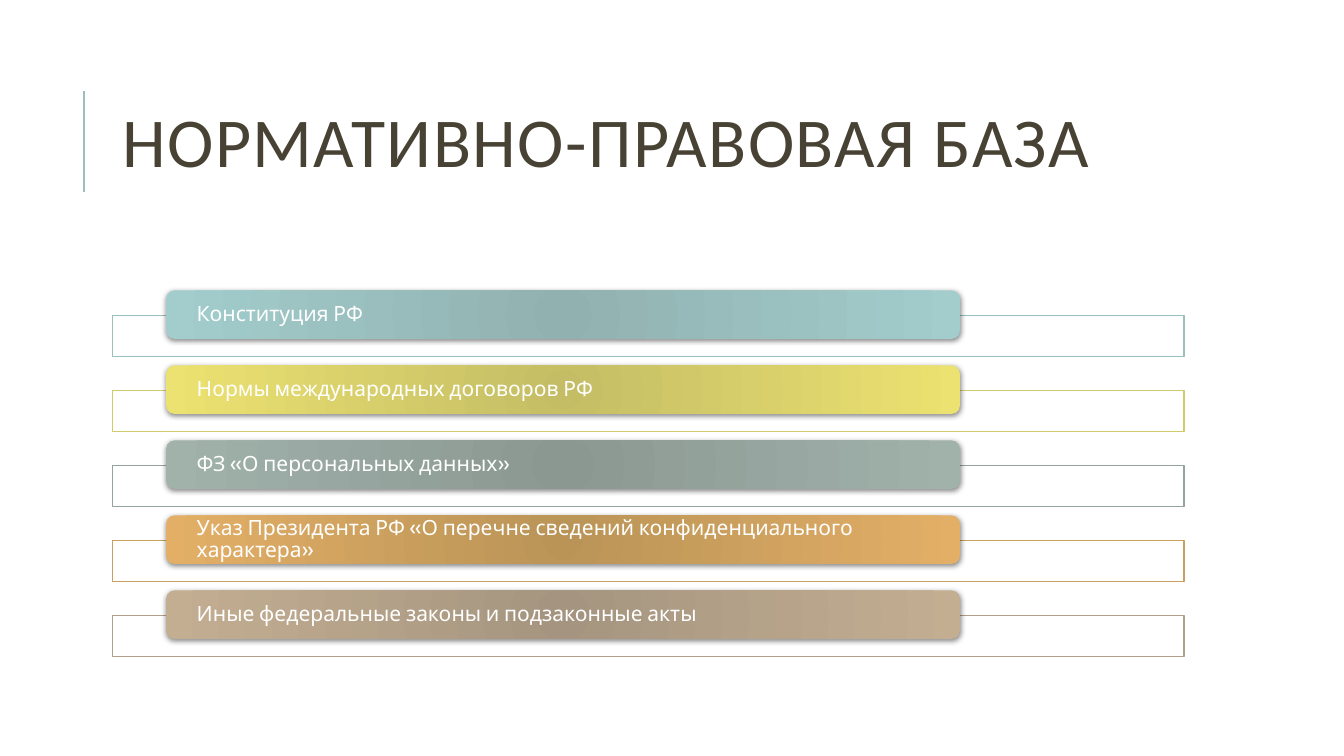
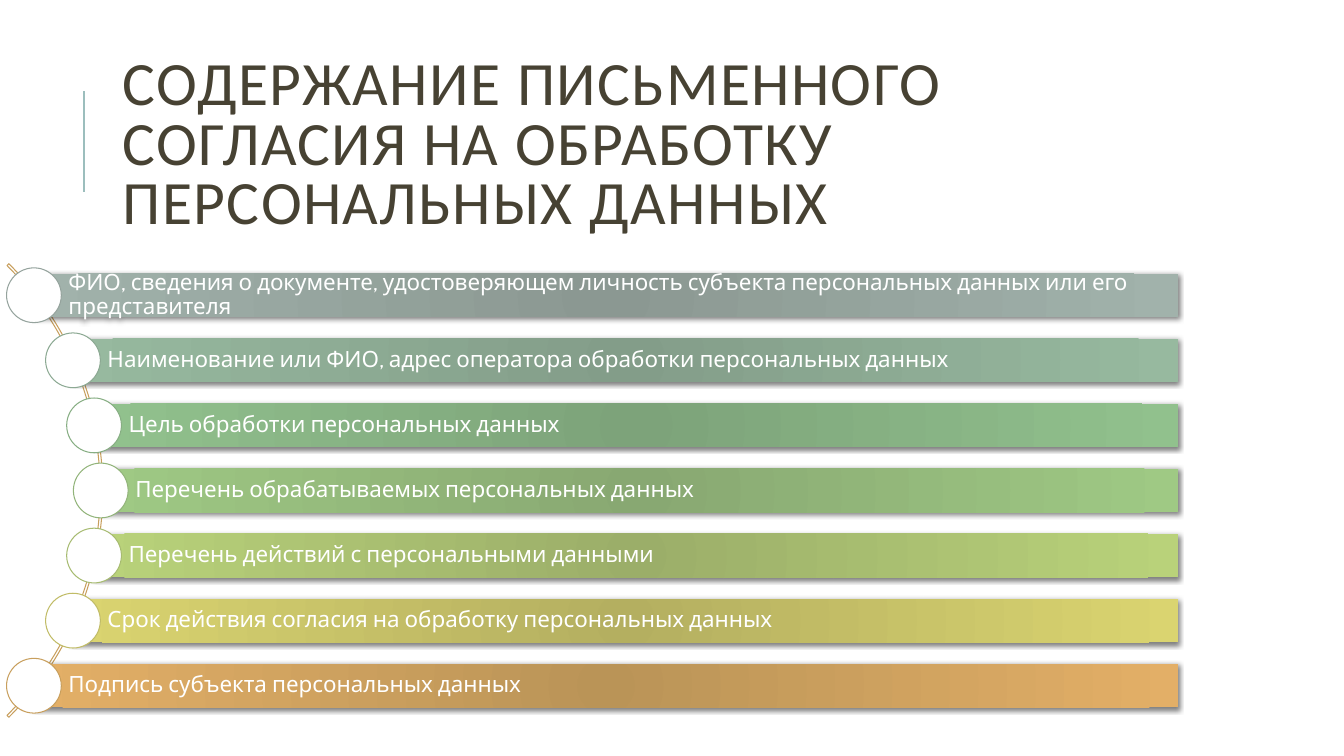
from math import sqrt

from lxml.etree import SubElement
from pptx import Presentation
from pptx.dml.color import RGBColor
from pptx.enum.shapes import MSO_CONNECTOR, MSO_SHAPE
from pptx.enum.text import MSO_ANCHOR, PP_ALIGN
from pptx.oxml.ns import qn
from pptx.util import Cm, Pt

COLOURS = {"title": "474233", "rule": "9CBEBD", "white": "FFFFFF", "shadow": "000000"}

# Each tone: thin outline, gradient centre, gradient rim
TONES = {
    "teal": {"edge": "9CBEBD", "core": "91B1B0", "rim": "A2CDCC"},
    "yellow": {"edge": "D2CB6C", "core": "C4BD65", "rim": "ECE271"},
    "grey": {"edge": "95A39D", "core": "8B9892", "rim": "A1B2AB"},
    "orange": {"edge": "C89F5D", "core": "BA9457", "rim": "E3AF67"},
    "beige": {"edge": "B1A089", "core": "A59580", "rim": "C3AE92"},
    "sage": {"edge": "8CA993", "core": "839D89", "rim": "97B99F"},
    "green": {"edge": "87AE83", "core": "7DA37A", "rim": "91C18D"},
    "leaf": {"edge": "92B47A", "core": "88A872", "rim": "9FC984"},
    "lime": {"edge": "A7BB71", "core": "9BAE69", "rim": "B9D27A"},
    "olive": {"edge": "C1BC67", "core": "B4AF60", "rim": "DAD470"},
}
TITLE_FONT, BODY_FONT = "Calibri", "Cabin"

LAWS = [
    ("teal", "Конституция РФ"),
    ("yellow", "Нормы международных договоров РФ"),
    ("grey", "ФЗ «О персональных данных»"),
    ("orange", "Указ Президента РФ «О перечне сведений конфиденциального характера»"),
    ("beige", "Иные федеральные законы и подзаконные акты"),
]
CONSENT_PARTS = [
    ("grey", "ФИО, сведения о документе, удостоверяющем личность субъекта "
             "персональных данных или его представителя"),
    ("sage", "Наименование или ФИО, адрес оператора обработки персональных данных"),
    ("green", "Цель обработки персональных данных"),
    ("leaf", "Перечень обрабатываемых персональных данных"),
    ("lime", "Перечень действий с персональными данными"),
    ("olive", "Срок действия согласия на обработку персональных данных"),
    ("orange", "Подпись субъекта персональных данных"),
]


def rgb(value):
    return RGBColor.from_string(value)


def write_text(shape, text, font, size, colour, spacing):
    """Put one left-aligned, vertically centred paragraph into a shape."""
    frame = shape.text_frame
    frame.word_wrap = True
    frame.vertical_anchor = MSO_ANCHOR.MIDDLE
    para = frame.paragraphs[0]
    para.text = text
    para.alignment = PP_ALIGN.LEFT
    para.line_spacing = spacing
    para.font.name = font
    para.font.size = Pt(size)
    para.font.color.rgb = rgb(colour)
    return para


def add_titled_page(deck, title, size):
    page = deck.slides.add_slide(deck.slide_layouts[6])
    # Vertical rule beside the title
    rule = page.shapes.add_connector(
        MSO_CONNECTOR.STRAIGHT, Cm(2.12), Cm(4.83), Cm(2.12), Cm(2.29))
    rule.line.color.rgb = rgb(COLOURS["rule"])
    rule.line.width = Pt(1.5)
    SubElement(rule._element.spPr, qn("a:effectLst"))
    # Title with letter spacing
    box = page.shapes.add_textbox(Cm(2.84), Cm(1.63), Cm(27), Cm(4.17))
    para = write_text(box, title, TITLE_FONT, size, COLOURS["title"], 0.8)
    for span in para.runs:
        span.font._element.set("spc", "100")
    return page


def add_outline(page, kind, left, top, width, height, edge, filled=True):
    shape = page.shapes.add_shape(kind, Cm(left), Cm(top), Cm(width), Cm(height))
    shape.shadow.inherit = False
    if filled:
        shape.fill.solid()
        shape.fill.fore_color.rgb = rgb(COLOURS["white"])
    else:
        shape.fill.background()
    shape.line.color.rgb = rgb(edge)
    shape.line.width = Pt(0.75)
    return shape


def fill_radial(shape, tone):
    shape.fill.gradient()
    for stop, part in zip(shape.fill.gradient_stops, ("core", "rim")):
        stop.color.rgb = rgb(tone[part])
    gradient = shape._element.spPr.find(qn("a:gradFill"))
    gradient.remove(gradient.find(qn("a:lin")))
    circle = SubElement(gradient, qn("a:path"), path="circle")
    SubElement(circle, qn("a:fillToRect"), dict.fromkeys("ltrb", "100000"))


def cast_shadow(shape):
    shape.shadow.inherit = False
    effects = shape._element.spPr.find(qn("a:effectLst"))
    shadow = SubElement(effects, qn("a:outerShdw"), blurRad=str(Pt(4)),
                        dist=str(Pt(1)), dir="5400000", rotWithShape="0")
    colour = SubElement(shadow, qn("a:srgbClr"), val=COLOURS["shadow"])
    SubElement(colour, qn("a:alpha"), val="50000")


def add_bar(page, kind, left, top, width, height, tone, text, size, insets):
    bar = page.shapes.add_shape(kind, Cm(left), Cm(top), Cm(width), Cm(height))
    bar.line.fill.background()
    fill_radial(bar, tone)
    cast_shadow(bar)
    frame = bar.text_frame
    inset_left, inset_right, inset_vertical = insets
    frame.margin_left, frame.margin_right = Cm(inset_left), Cm(inset_right)
    frame.margin_top = frame.margin_bottom = Cm(inset_vertical)
    write_text(bar, text, BODY_FONT, size, COLOURS["white"], 0.9)


def add_law_list(page):
    """Rounded bars, each overlapping the top of a wide outlined frame."""
    first_top, pitch = 7.95, 1.89
    for index, (name, text) in enumerate(LAWS):
        tone = TONES[name]
        top = first_top + index * pitch
        add_outline(page, MSO_SHAPE.RECTANGLE, 2.84, top, 27, 1.04, tone["edge"])
        add_bar(page, MSO_SHAPE.ROUNDED_RECTANGLE, 4.19, top - 0.63, 20, 1.22,
                tone, text, 15, (0.71, 0.71, 0))


def add_consent_arc(page):
    """Bars that start from dots placed along a circular arc."""
    centre_x, centre_y, radius = -5.49, 12.36, 8.03
    arc_size, pitch, bar_right = 16.16, 1.64, 29.69
    bar_height, dot_size = 1.09, 1.38
    # Thin arc behind the dots
    arc = add_outline(page, MSO_SHAPE.BLOCK_ARC, centre_x - arc_size / 2,
                      centre_y - arc_size / 2, arc_size, arc_size,
                      TONES["orange"]["edge"], filled=False)
    for index, value in enumerate((189, 27, 0.004)):
        arc.adjustments[index] = value
    # Bars and dots
    middle = (len(CONSENT_PARTS) - 1) / 2
    for index, (name, text) in enumerate(CONSENT_PARTS):
        tone = TONES[name]
        offset = (index - middle) * pitch
        x = centre_x + sqrt(radius ** 2 - offset ** 2)
        y = centre_y + offset
        add_bar(page, MSO_SHAPE.RECTANGLE, x, y - bar_height / 2, bar_right - x,
                bar_height, tone, text, 16, (0.87, 0.1, 0.1))
        add_outline(page, MSO_SHAPE.OVAL, x - dot_size / 2, y - dot_size / 2,
                    dot_size, dot_size, tone["edge"])


def main():
    deck = Presentation()
    deck.slide_width, deck.slide_height = Cm(33.87), Cm(19.05)
    add_law_list(add_titled_page(deck, "НОРМАТИВНО-ПРАВОВАЯ БАЗА", 50))
    add_consent_arc(add_titled_page(
        deck, "СОДЕРЖАНИЕ ПИСЬМЕННОГО СОГЛАСИЯ НА ОБРАБОТКУ ПЕРСОНАЛЬНЫХ ДАННЫХ", 44))
    deck.save("out.pptx")


if __name__ == "__main__":
    main()
